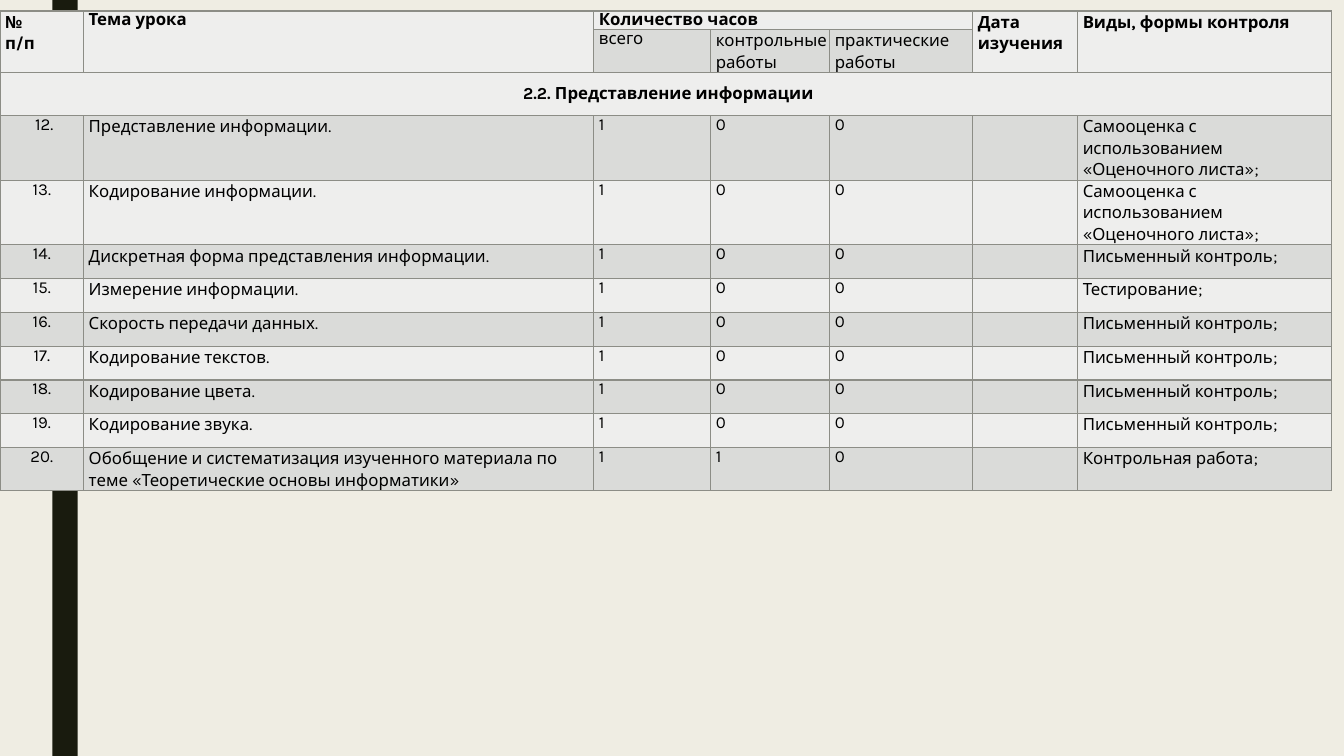
from pptx import Presentation
from pptx.dml.color import RGBColor
from pptx.enum.shapes import MSO_SHAPE
from pptx.enum.text import MSO_ANCHOR, PP_ALIGN
from pptx.oxml import parse_xml
from pptx.util import Inches, Pt

RECT = MSO_SHAPE.RECTANGLE
MIDDLE = MSO_ANCHOR.MIDDLE
CENTER = PP_ALIGN.CENTER
NS = "http://schemas.openxmlformats.org/drawingml/2006/main"

# Content: header and section as (row, column, row span, column span, text)
HEAD = [
    (0, 0, 2, 1, "№\nп/п"),
    (0, 1, 2, 1, "Тема урока"),
    (0, 2, 1, 3, "Количество часов"),
    (0, 5, 2, 1, "Дата\nизучения"),
    (0, 6, 2, 1, "Виды, формы контроля"),
    (2, 0, 1, 7, "2.2. Представление информации"),
]
HOURS = ["всего", "контрольные работы", "практические работы"]
SELF = "Самооценка с использованием «Оценочного листа»;"
WRITTEN = "Письменный контроль;"
FIRST = 12
# Lessons: topic, tests, form of control
LESSONS = [
    ("Представление информации.", 0, SELF),
    ("Кодирование информации.", 0, SELF),
    ("Дискретная форма представления информации.", 0, WRITTEN),
    ("Измерение информации.", 0, "Тестирование;"),
    ("Скорость передачи данных.", 0, WRITTEN),
    ("Кодирование текстов.", 0, WRITTEN),
    ("Кодирование цвета.", 0, WRITTEN),
    ("Кодирование звука.", 0, WRITTEN),
    ("Обобщение и систематизация изученного материала по теме "
     "«Теоретические основы информатики»", 1, "Контрольная работа;"),
]

# Grid: columns in inches, rows in points
COLS = [0.83, 5.06, 1.16, 1.18, 1.42, 1.04, 2.52]
ROWS = [13.4, 30.7, 30.7, 46.1, 46.1] + [24.15] * 6 + [30.7]
BANDS = ["EEEEED", "DADBD9"]
EDGE, INK, PAPER, STRIPE = "8C8D86", "000000", "EFEDE3", "191B0E"
TIGHT, LOOSE = 0.95, 1.09


def color(code):
    return RGBColor.from_string(code)


def border(cell):
    props = cell._tc.get_or_add_tcPr()
    for i, side in enumerate(("lnL", "lnR", "lnT", "lnB")):
        props.insert(i, parse_xml(
            f'<a:{side} xmlns:a="{NS}" w="{Pt(1)}"><a:solidFill>'
            f'<a:srgbClr val="{EDGE}"/></a:solidFill></a:{side}>'))


def write(cell, text, lead=LOOSE, bold=False, align=None, indent=0.05):
    para = cell.text_frame.paragraphs[0]
    para.text = text
    para.alignment = align
    para.line_spacing = lead
    para.space_before = Pt(4.9)
    para._p.get_or_add_pPr().set("marL", str(Inches(indent)))
    para.font.name = "Karla"
    para.font.size = Pt(12)
    para.font.bold = bold
    para.font.color.rgb = color(INK)


deck = Presentation()
deck.slide_width, deck.slide_height = Inches(13.33), Inches(7.5)
slide = deck.slides.add_slide(deck.slide_layouts[6])
slide.background.fill.solid()
slide.background.fill.fore_color.rgb = color(PAPER)

# Side stripe
stripe = slide.shapes.add_shape(RECT, Inches(0.52), 0, Inches(0.25), deck.slide_height)
stripe.shadow.inherit = False
stripe.fill.solid()
stripe.fill.fore_color.rgb = color(STRIPE)
stripe.line.fill.background()

# Table grid
table = slide.shapes.add_table(
    len(ROWS), len(COLS), 0, Inches(0.11), Inches(sum(COLS)), Pt(sum(ROWS))).table
for col, width in zip(table.columns, COLS):
    col.width = Inches(width)
for r, (row, height) in enumerate(zip(table.rows, ROWS)):
    row.height = Pt(height)
    for cell in row.cells:
        cell.margin_left = cell.margin_right = 0
        cell.margin_top = cell.margin_bottom = 0
        cell.fill.solid()
        cell.fill.fore_color.rgb = color(BANDS[r % 2])
        border(cell)
        write(cell, "", TIGHT)

# Header and section title
for r, c, down, across, text in HEAD:
    cell = table.cell(r, c)
    cell.merge(table.cell(r + down - 1, c + across - 1))
    wide = "\n" in text or c == 6
    write(cell, text, LOOSE if wide else TIGHT, True, CENTER if r else None)
table.cell(2, 0).vertical_anchor = MIDDLE
for c, text in enumerate(HOURS, 2):
    write(table.cell(1, c), text, LOOSE if c > 2 else TIGHT)

# Lessons
for i, (topic, tests, form) in enumerate(LESSONS):
    cells = table.rows[i + 3].cells
    write(cells[0], f"{FIRST + i}.", TIGHT, align=CENTER, indent=0 if i else 0.05)
    write(cells[1], topic)
    for c, count in enumerate((1, tests, 0), 2):
        write(cells[c], str(count), TIGHT)
    write(cells[6], form)

deck.save("out.pptx")
